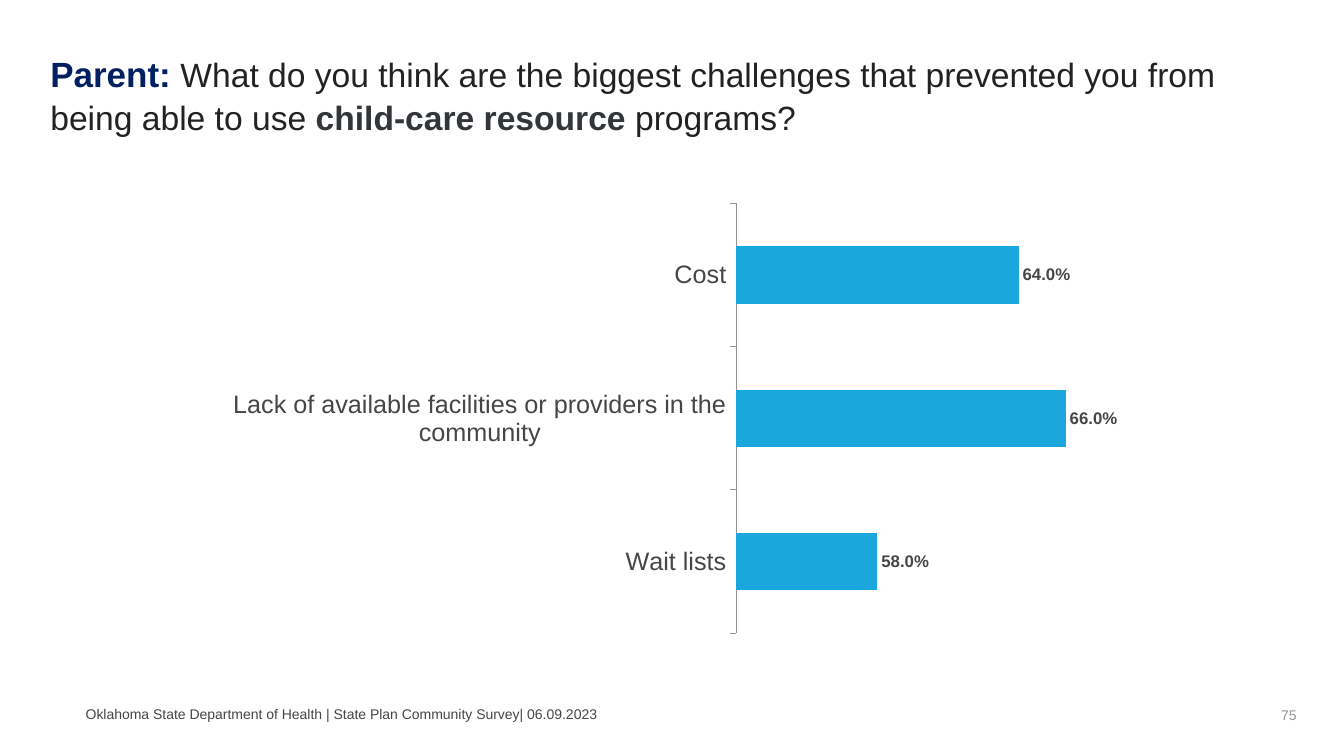
import pptx
import pptx.chart.data
import pptx.dml.color
import pptx.enum.chart
import pptx.enum.text
import pptx.util
from lxml import etree
from pptx.util import Inches, Pt

RGBColor = pptx.dml.color.RGBColor
NAVY = RGBColor(0x00, 0x20, 0x60)
BLACK = RGBColor(0x22, 0x22, 0x22)
SLATE = RGBColor(0x32, 0x36, 0x3A)
DARK_GRAY = RGBColor(0x46, 0x46, 0x46)
MID_GRAY = RGBColor(0x94, 0x94, 0x94)
BLUE = RGBColor(0x1C, 0xA6, 0xDE)
FONT = "Arial"

# (text, size, colour, bold)
TITLE = [
    ("Parent: ", 25, NAVY, True),
    ("What do you think are the biggest challenges that prevented you from "
     "being able to use ", 24, BLACK, False),
    ("child-care resource ", 24, SLATE, True),
    ("programs?", 24, BLACK, False),
]
FOOTER = "Oklahoma State Department of Health | State Plan Community Survey| 06.09.2023"
PAGE = "75"
CHALLENGES = {  # listed from the bottom bar up
    "Wait lists": 0.58,
    "Lack of available facilities or providers in the community": 0.66,
    "Cost": 0.64,
}
AXIS_RANGE = (0.52, 0.68)

# left, top, width, height in inches
TITLE_BOX = (0.5, 0.45, 12.14, 0.92)
PAGE_BOX = (9.96, 6.98, 3, 0.22)
FOOTER_BOX = (0.85, 6.97, 8.9, 0.22)
CHART_BOX = (2.11, 1.93, 9.11, 4.44)
PLOT_SHARES = {"x": 0.57, "y": 0.02, "w": 0.41, "h": 0.96}  # of the chart box


def add_text(slide, box, runs, left_inset, anchor, align, spacing=1.0):
    tf = slide.shapes.add_textbox(*map(Inches, box)).text_frame
    tf.word_wrap = True
    tf.margin_left = Inches(left_inset)
    tf.vertical_anchor = anchor
    p = tf.paragraphs[0]
    p.alignment = align
    p.line_spacing = spacing
    p.font.name = FONT
    for text, size, color, bold in runs:
        r = p.add_run()
        r.text = text
        r.font.size = Pt(size)
        r.font.color.rgb = color
        r.font.bold = bold


def style_font(font, size, bold=False):
    font.name = FONT
    font.size = Pt(size)
    font.bold = bold
    font.color.rgb = DARK_GRAY


def place_plot(chart, shares):
    """Fix the inner plot area at the given shares of the chart box."""
    plot_area = chart.plots[0]._element.getparent()
    ns = etree.QName(plot_area).namespace
    for old in plot_area.findall(f"{{{ns}}}layout"):
        plot_area.remove(old)
    layout = etree.Element(f"{{{ns}}}layout")
    manual = etree.SubElement(layout, f"{{{ns}}}manualLayout")
    settings = {"layoutTarget": "inner", "xMode": "edge", "yMode": "edge", **shares}
    for tag, value in settings.items():
        etree.SubElement(manual, f"{{{ns}}}{tag}").set("val", str(value))
    plot_area.insert(0, layout)


def add_challenge_chart(slide):
    data = pptx.chart.data.CategoryChartData(number_format="0.0%")
    data.categories = list(CHALLENGES)
    data.add_series("Series 1", list(CHALLENGES.values()))
    chart = slide.shapes.add_chart(
        pptx.enum.chart.XL_CHART_TYPE.BAR_CLUSTERED,
        *map(Inches, CHART_BOX), data).chart
    chart.has_legend = False
    chart.has_title = False
    style_font(chart.font, 18)

    cat_axis = chart.category_axis
    cat_axis.major_tick_mark = pptx.enum.chart.XL_TICK_MARK.OUTSIDE
    cat_axis.format.line.color.rgb = MID_GRAY
    cat_axis.format.line.width = Pt(0.5)
    style_font(cat_axis.tick_labels.font, 18)

    val_axis = chart.value_axis
    val_axis.minimum_scale, val_axis.maximum_scale = AXIS_RANGE
    val_axis.has_major_gridlines = False
    val_axis.visible = False

    plot = chart.plots[0]
    plot.gap_width = 150
    plot.vary_by_categories = False
    fill = plot.series[0].format.fill
    fill.solid()
    fill.fore_color.rgb = BLUE

    labels = plot.series[0].data_labels
    labels.show_value = True
    labels.number_format = "0.0%"
    labels.number_format_is_linked = False
    labels.position = pptx.enum.chart.XL_LABEL_POSITION.OUTSIDE_END
    style_font(labels.font, 12, bold=True)
    place_plot(chart, PLOT_SHARES)


def main():
    prs = pptx.Presentation()
    prs.slide_width, prs.slide_height = Inches(13.33), Inches(7.5)
    slide = prs.slides.add_slide(prs.slide_layouts[6])
    anchor, align = pptx.enum.text.MSO_ANCHOR, pptx.enum.text.PP_ALIGN

    add_text(slide, TITLE_BOX, TITLE, 0, anchor.TOP, align.LEFT, spacing=1.06)
    add_text(slide, PAGE_BOX, [(PAGE, 10, MID_GRAY, False)], 0.1,
             anchor.MIDDLE, align.RIGHT)
    add_text(slide, FOOTER_BOX, [(FOOTER, 10, DARK_GRAY, False)], 0,
             anchor.MIDDLE, align.LEFT)
    add_challenge_chart(slide)
    prs.save("out.pptx")


if __name__ == "__main__":
    main()
